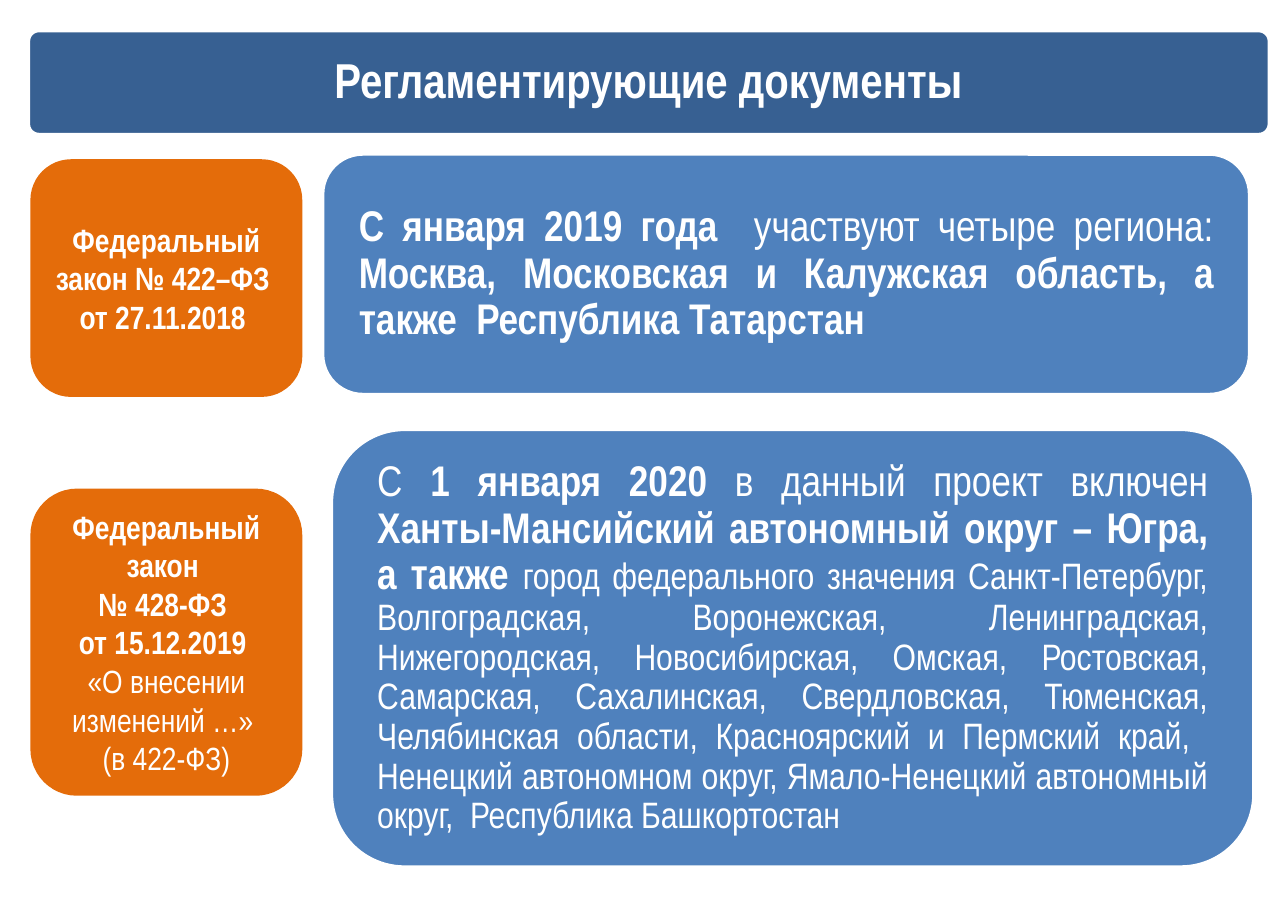
from pptx import Presentation
from pptx.dml.color import RGBColor
from pptx.enum.shapes import MSO_SHAPE
from pptx.enum.text import MSO_ANCHOR, PP_ALIGN
from pptx.util import Inches, Pt

WHITE = RGBColor(0xFF, 0xFF, 0xFF)
NAVY = RGBColor(0x37, 0x60, 0x92)
BLUE = RGBColor(0x4F, 0x81, 0xBD)
ORANGE = RGBColor(0xE4, 0x6C, 0x0A)
FONT = "Arial Narrow"

LAW_422 = [
    [("Федеральный закон № 422–ФЗ ", 21, True)],
    [("от 27.11.2018 ", 21, True)],
]
LAW_428 = [
    [("Федеральный закон ", 21, True)],
    [("№ 428-ФЗ ", 21, True)],
    [("от 15.12.2019 ", 21, True)],
    [("«О внесении изменений …» ", 21, False)],
    [("(в 422-ФЗ)", 21, False)],
]
REGIONS_2019 = [[
    ("С января 2019 года ", 28, True),
    (" участвуют четыре региона: ", 28, False),
    ("Москва, Московская и Калужская область, а также  Республика Татарстан ", 28, True),
]]
REGIONS_2020 = [[
    ("С", 28, False),
    (" 1 января 2020", 28, True),
    (" в данный проект включен ", 28, False),
    ("Ханты-Мансийский автономный округ – Югра, а также ", 28, True),
    ("город федерального значения Санкт-Петербург, Волгоградская, Воронежская, "
     "Ленинградская, Нижегородская, Новосибирская, Омская, Ростовская, Самарская, "
     "Сахалинская, Свердловская, Тюменская, Челябинская области, Красноярский и "
     "Пермский край,  Ненецкий автономном округ, Ямало-Ненецкий автономный округ,  "
     "Республика Башкортостан ", 24, False),
]]


def add_text(tf, paragraphs, align, spacing):
    """Fill a text frame with paragraphs of (text, size, bold) runs."""
    for i, runs in enumerate(paragraphs):
        p = tf.paragraphs[0] if i == 0 else tf.add_paragraph()
        p.alignment = align
        p.line_spacing = spacing
        for text, size, bold in runs:
            r = p.add_run()
            r.text = text
            r.font.name = FONT
            r.font.size = Pt(size)
            r.font.bold = bold
            r.font.color.rgb = WHITE


def add_box(s, box, fill, line, radius, margins, paragraphs,
            align=PP_ALIGN.CENTER, spacing=0.9):
    """Add a rounded box with vertically centred text."""
    sp = s.shapes.add_shape(MSO_SHAPE.ROUNDED_RECTANGLE, *map(Inches, box))
    sp.adjustments[0] = radius
    sp.shadow.inherit = False
    sp.fill.solid()
    sp.fill.fore_color.rgb = fill
    sp.line.color.rgb = line
    sp.line.width = Pt(2)
    tf = sp.text_frame
    tf.word_wrap = True
    tf.vertical_anchor = MSO_ANCHOR.MIDDLE
    tf.margin_left = tf.margin_right = Inches(margins[0])
    tf.margin_top = tf.margin_bottom = Inches(margins[1])
    add_text(tf, paragraphs, align, spacing)


def add_law(s, top, height, paragraphs):
    """Add an orange box naming a law in the left column."""
    add_box(s, (0.29, top, 2.44, height), ORANGE, ORANGE, 0.167,
            (0.1, 0.05), paragraphs, spacing=1.0)


def add_regions(s, box, paragraphs):
    """Add a blue box listing the regions of one stage."""
    add_box(s, box, BLUE, WHITE, 0.167, (0.22, 0.22), paragraphs,
            align=PP_ALIGN.JUSTIFY)


def main():
    """Build the slide and save it."""
    prs = Presentation()
    prs.slide_width = Inches(11.69)
    prs.slide_height = Inches(8.27)
    s = prs.slides.add_slide(prs.slide_layouts[6])
    add_box(s, (0.26, 0.28, 11.26, 0.94), NAVY, WHITE, 0.1, (0.07, 0.04),
            [[("Регламентирующие документы", 32, True)]])
    add_regions(s, (2.93, 1.4, 8.41, 2.18), REGIONS_2019)
    add_regions(s, (3.01, 3.9, 8.37, 3.97), REGIONS_2020)
    add_law(s, 1.46, 2.13, LAW_422)
    add_law(s, 4.45, 2.76, LAW_428)
    prs.save("out.pptx")


if __name__ == "__main__":
    main()
